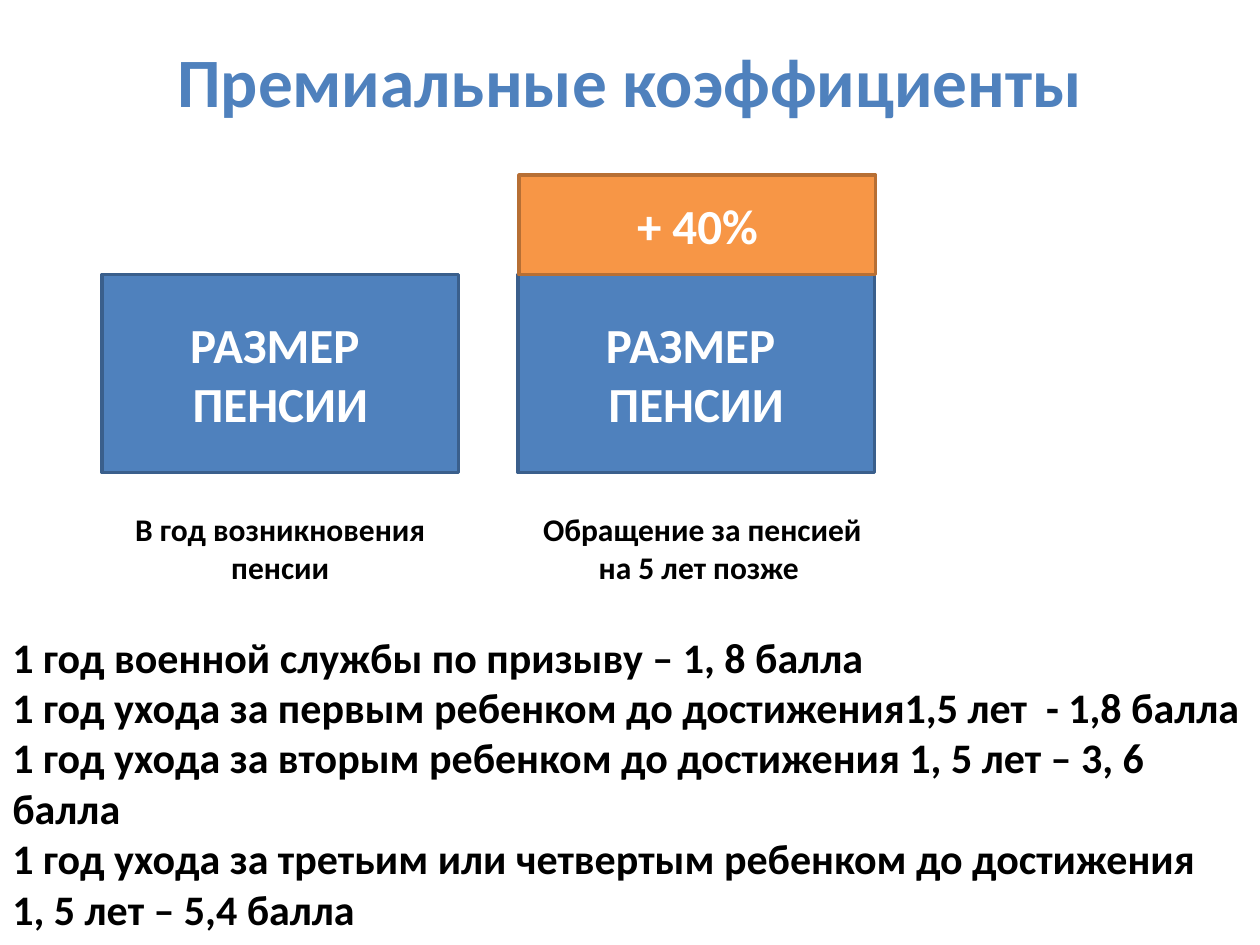
import pptx
import pptx.util
import pptx.dml.color
import pptx.enum.shapes
import pptx.enum.text
from dataclasses import dataclass

Inches = pptx.util.Inches
Pt = pptx.util.Pt
ALIGN = pptx.enum.text.PP_ALIGN
ANCHOR = pptx.enum.text.MSO_ANCHOR


@dataclass(frozen=True)
class Theme:
    font: str = "Calibri"
    blue: str = "4F81BD"
    blue_line: str = "3A5F8C"
    orange: str = "F79646"
    orange_line: str = "B76F34"
    white: str = "FFFFFF"
    black: str = "000000"
    title_size: float = 39.6
    box_size: float = 28
    caption_size: float = 18
    body_size: float = 24
    line_width: float = 2


THEME = Theme()

TITLE = "Премиальные коэффициенты"
PENSION = ["РАЗМЕР ", "ПЕНСИИ"]
BONUS = "+ 40%"
CAPTIONS = [
    (0.81, "В год возникновения пенсии"),
    (4.16, "Обращение за пенсией на 5 лет позже "),
]
POINTS = [
    "1 год военной службы по призыву – 1, 8 балла",
    "1 год ухода за первым ребенком до достижения1,5 лет  - 1,8 балла",
    "1 год ухода за вторым ребенком до достижения 1, 5 лет – 3, 6 балла",
    "1 год ухода за третьим или четвертым ребенком до достижения",
    "1, 5 лет – 5,4 балла",
]

BAR_LEFTS = [0.81, 4.11]
BAR_WIDTH, BAR_HEIGHT, BAR_TOP = 2.83, 1.57, 2.18
BONUS_LEFT, BONUS_HEIGHT = 4.12, 0.79


def rgb(value):
    return pptx.dml.color.RGBColor.from_string(value)


def write(tf, lines, size, color, align=ALIGN.CENTER, anchor=ANCHOR.TOP):
    tf.word_wrap = True
    tf.vertical_anchor = anchor
    for i, line in enumerate(lines):
        p = tf.add_paragraph() if i else tf.paragraphs[0]
        p.text = line
        p.alignment = align
        p.font.name = THEME.font
        p.font.size = Pt(size)
        p.font.bold = True
        p.font.color.rgb = rgb(color)


def add_text(s, box, lines, size, color=THEME.black, align=ALIGN.CENTER):
    tf = s.shapes.add_textbox(*map(Inches, box)).text_frame
    write(tf, lines, size, color, align)
    return tf


def add_bar(s, box, lines, fill, line):
    sp = s.shapes.add_shape(pptx.enum.shapes.MSO_SHAPE.RECTANGLE, *map(Inches, box))
    sp.shadow.inherit = False
    sp.fill.solid()
    sp.fill.fore_color.rgb = rgb(fill)
    sp.line.color.rgb = rgb(line)
    sp.line.width = Pt(THEME.line_width)
    write(sp.text_frame, lines, THEME.box_size, THEME.white, anchor=ANCHOR.MIDDLE)


def main():
    prs = pptx.Presentation()
    prs.slide_width, prs.slide_height = Inches(10), Inches(7.5)
    s = prs.slides.add_slide(prs.slide_layouts[6])

    title = add_text(s, (0.5, 0.3, 9, 1.25), [TITLE], THEME.title_size, THEME.blue)
    title.margin_top = 0

    for left in BAR_LEFTS:
        add_bar(s, (left, BAR_TOP, BAR_WIDTH, BAR_HEIGHT), PENSION,
                THEME.blue, THEME.blue_line)
    add_bar(s, (BONUS_LEFT, BAR_TOP - BONUS_HEIGHT, BAR_WIDTH, BONUS_HEIGHT), [BONUS],
            THEME.orange, THEME.orange_line)

    for left, caption in CAPTIONS:
        add_text(s, (left, 4, BAR_WIDTH, 0.71), [caption], THEME.caption_size)
    add_text(s, (0, 4.96, 10, 2.83), POINTS, THEME.body_size, align=ALIGN.LEFT)

    prs.save("out.pptx")


if __name__ == "__main__":
    main()
